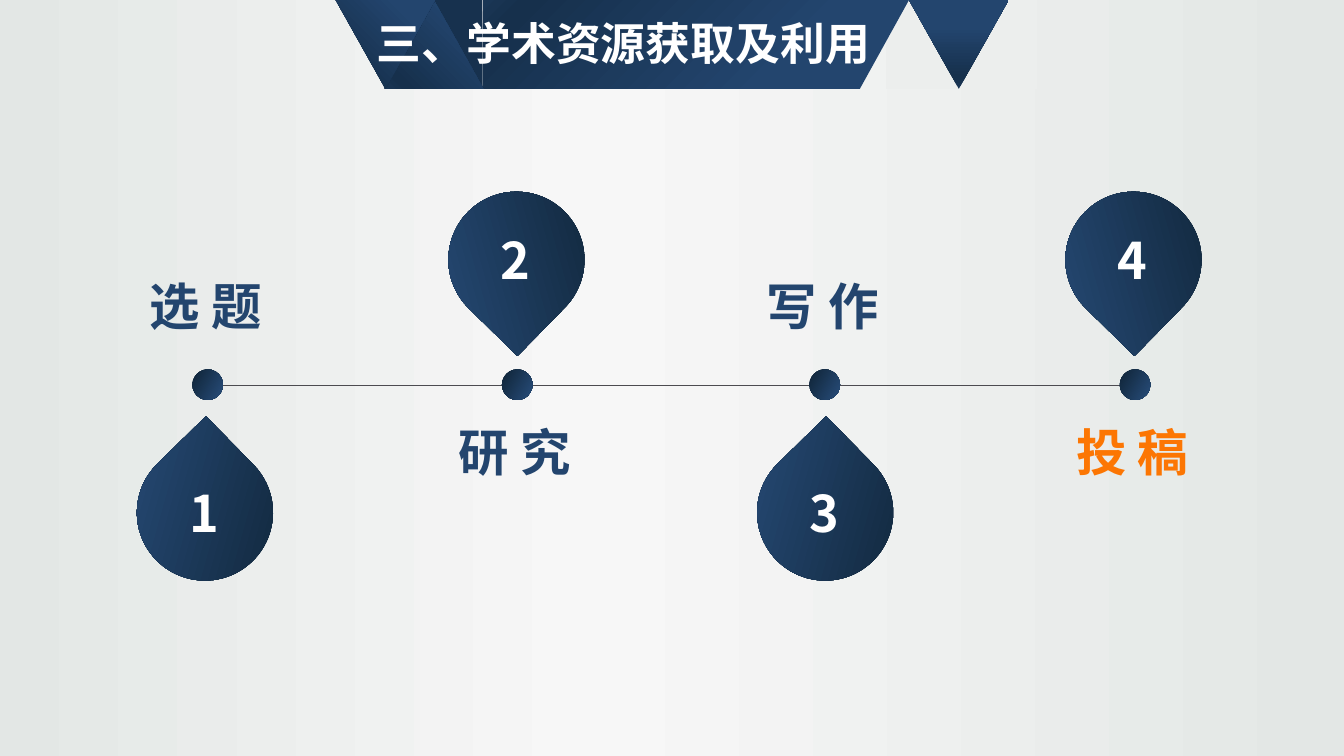
import pptx
import pptx.dml.color
import pptx.enum.shapes
import pptx.enum.text
import pptx.oxml
import pptx.oxml.ns
import pptx.util
from lxml import etree

Cm = pptx.util.Cm
qn = pptx.oxml.ns.qn
KIND = pptx.enum.shapes.MSO_SHAPE
FONT = "Noto Sans CJK SC"
NAVY = "23456E"
DEEP = [(0, "0F2437"), (100, "284D7A")]


def rgb(code):
    return pptx.dml.color.RGBColor.from_string(code)


def paint(fill, owner, stops, angle):
    """Fill with a gradient; stops are (percent, colour), angle is clockwise."""
    fill.solid()
    old = owner.find(qn("a:solidFill"))
    grad = etree.Element(qn("a:gradFill"), rotWithShape="1")
    group = etree.SubElement(grad, qn("a:gsLst"))
    for place, code in stops:
        stop = etree.SubElement(group, qn("a:gs"), pos=str(place * 1000))
        etree.SubElement(stop, qn("a:srgbClr"), val=code)
    etree.SubElement(grad, qn("a:lin"), ang=str(angle * 60000), scaled="0")
    owner.replace(old, grad)


deck = pptx.Presentation()
deck.slide_width, deck.slide_height = Cm(33.87), Cm(19.05)
slide = deck.slides.add_slide(deck.slide_layouts[6])
back = slide.background.fill
back.solid()
paint(back, slide.element.cSld.bg.bgPr,
      [(1, "E3E7E5"), (56, "F7F7F7"), (100, "E3E7E5")], 180)

# Timeline
line = slide.shapes.add_connector(
    pptx.enum.shapes.MSO_CONNECTOR.STRAIGHT, Cm(4.9), Cm(9.7), Cm(28.91), Cm(9.7))
line.line.color.rgb = rgb("4C4B50")
line.line.width = pptx.util.Pt(0.5)
etree.SubElement(line._element.spPr, qn("a:effectLst"))

# Stations: dot left, drop left, label left, label, colour
stations = [
    (4.85, 3.45, 3.53, "选 题", NAVY),
    (12.65, 11.3, 11.3, "研 究", NAVY),
    (20.4, 19.08, 19.08, "写 作", NAVY),
    (28.22, 26.85, 26.87, "投 稿", "FC7603"),
]
# Shapes: kind, left, top, width, height, turn, flips, fill, angle
parts = []
# Texts: left, top, width, height, words, size, colour, wrap
texts = [(9.25, 0.28, 13, 1.62, "三、学术资源获取及利用", 32, "FFFFFF", True)]
for i, (dot, drop, left, label, tint) in enumerate(stations):
    above = i % 2 == 1
    top, turn, flips = (4.83, 134.4, "") if above else (11.2, 225.6, "V")
    parts.append((KIND.OVAL, dot, 9.31, 0.77, 0.77, 0, "", DEEP, 30))
    parts.append((KIND.TEAR, drop, top, 3.43, 3.43, turn, flips, DEEP, 30))
    texts.append((left, 10.49 if above else 6.81, 3.43, 1.8, label, 36, tint, False))
    texts.append((drop + 1.07, top + 0.82, 1.3, 1.8, str(i + 1), 36, "FFFFFF", False))

# Title ribbon
for kind, left, width, flips, fill, bend, angle in [
    (KIND.RECTANGLE, 22.33, 3.81, "", "ECEEED", 0, 0),
    (KIND.RIGHT_TRIANGLE, 21.67, 1.24, "V", NAVY, 0, 0),
    (KIND.RECTANGLE, 12.17, 9.5, "", None, 10, 45),
    (KIND.RIGHT_TRIANGLE, 10.9, 1.26, "HV", "17314E", 0, 0),
    (KIND.ISOSCELES_TRIANGLE, 9.68, 2.51, "", None, 13, 315),
    (KIND.ISOSCELES_TRIANGLE, 8.46, 2.51, "HV", None, 17, 135),
    (KIND.ISOSCELES_TRIANGLE, 22.91, 2.51, "HV", None, 13, 90),
]:
    last = 70 if angle == 90 else 78
    fill = fill or [(0, "1A3655"), (bend, "16304C"), (last, NAVY)]
    parts.append((kind, left, 0, width, 2.24, 0, flips, fill, angle))

for kind, left, top, width, height, turn, flips, fill, angle in parts:
    shape = slide.shapes.add_shape(kind, Cm(left), Cm(top), Cm(width), Cm(height))
    shape.shadow.inherit = False
    shape.line.fill.background()
    shape.rotation = turn
    for axis in flips:
        shape._element.spPr.xfrm.set("flip" + axis, "1")
    if isinstance(fill, str):
        shape.fill.solid()
        shape.fill.fore_color.rgb = rgb(fill)
    else:
        paint(shape.fill, shape._element.spPr, fill, angle)

for left, top, width, height, words, size, tint, wrap in texts:
    box = slide.shapes.add_textbox(Cm(left), Cm(top), Cm(width), Cm(height))
    frame = box.text_frame
    frame.word_wrap = wrap
    frame.auto_size = pptx.enum.text.MSO_AUTO_SIZE.SHAPE_TO_FIT_TEXT
    para = frame.paragraphs[0]
    para.text = words
    font = para.font
    font.name, font.size, font.bold = FONT, pptx.util.Pt(size), True
    font.color.rgb = rgb(tint)
    props = para._p.pPr.find(qn("a:defRPr"))
    etree.SubElement(props, qn("a:ea"), typeface=FONT)

deck.save("out.pptx")
